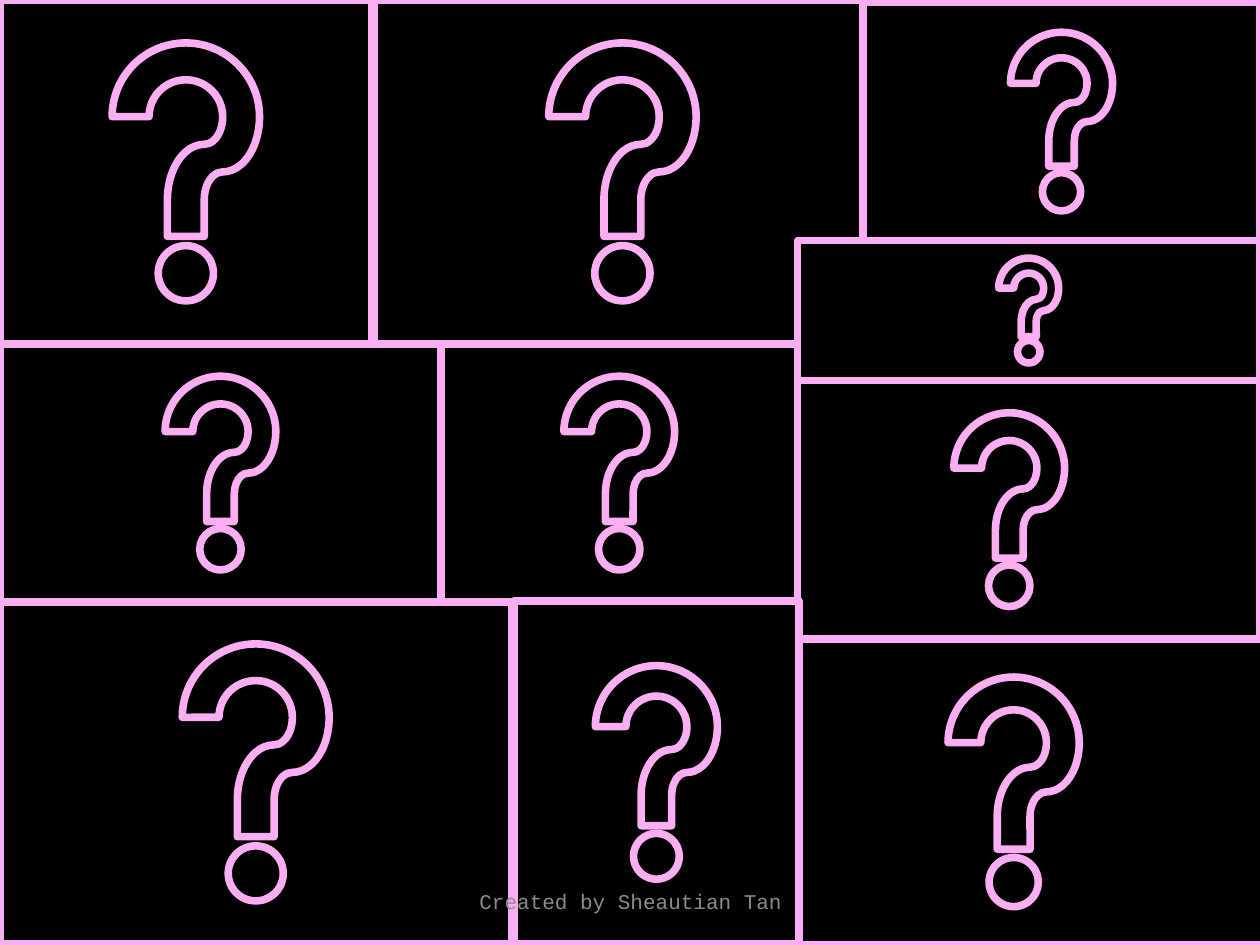
"""Build a slide covered by a wall of question tiles."""
from dataclasses import dataclass

from pptx import Presentation
from pptx.dml.color import RGBColor
from pptx.enum.shapes import MSO_SHAPE
from pptx.enum.text import MSO_ANCHOR, PP_ALIGN
from pptx.util import Inches, Pt

QUESTION_TILE = MSO_SHAPE.ACTION_BUTTON_HELP
MIDDLE = MSO_ANCHOR.MIDDLE
CENTER = PP_ALIGN.CENTER
BLANK_LAYOUT = 6


@dataclass(frozen=True)
class Theme:
    """Colours, font and sizes of the slide."""

    page: RGBColor = RGBColor(0xFF, 0xFF, 0xFF)
    tile: RGBColor = RGBColor(0x00, 0x00, 0x00)
    outline: RGBColor = RGBColor(0xFC, 0xAE, 0xF3)
    credit: RGBColor = RGBColor(0x8C, 0x8C, 0x8C)
    font: str = "Courier New"
    credit_size: Pt = Pt(12)
    outline_width: Pt = Pt(4.33)


class TileWall:
    """Draw styled elements on the current slide."""

    def __init__(self, page, theme):
        """Keep the page and theme, and paint the background."""
        self.page = page
        self.theme = theme
        background = page.background.fill
        background.solid()
        background.fore_color.rgb = theme.page

    def tile(self, left, top, width, height):
        """Add one question tile."""
        tile = self.page.shapes.add_shape(
            QUESTION_TILE, Inches(left), Inches(top), Inches(width), Inches(height)
        )
        tile.shadow.inherit = False
        tile.fill.solid()
        tile.fill.fore_color.rgb = self.theme.tile
        tile.line.color.rgb = self.theme.outline
        tile.line.width = self.theme.outline_width

    def credit(self, text, left, top, width, height):
        """Add a centred credit line."""
        box = self.page.shapes.add_textbox(
            Inches(left), Inches(top), Inches(width), Inches(height)
        )
        frame = box.text_frame
        frame.word_wrap = True
        frame.vertical_anchor = MIDDLE
        para = frame.paragraphs[0]
        para.alignment = CENTER
        span = para.add_run()
        span.text = text
        span.font.name = self.theme.font
        span.font.size = self.theme.credit_size
        span.font.color.rgb = self.theme.credit


TILES = [
    (6.02, 3.02, 3.98, 2.05),
    (6.05, 5.07, 3.99, 2.43),
    (0, 0, 2.95, 2.73),
    (0, 4.77, 4.06, 2.72),
    (2.97, 0, 3.94, 2.73),
    (0, 2.73, 3.5, 2.05),
    (6.85, 0.02, 3.15, 1.89),
    (3.5, 2.73, 2.83, 2.05),
    (6.33, 1.91, 3.67, 1.11),
    (4.08, 4.77, 2.26, 2.72),
]


def main():
    """Build and save the deck."""
    deck = Presentation()
    deck.slide_width = Inches(10)
    deck.slide_height = Inches(7.5)
    page = deck.slides.add_slide(deck.slide_layouts[BLANK_LAYOUT])
    wall = TileWall(page, Theme())
    for bounds in TILES:
        wall.tile(*bounds)
    wall.credit("Created by Sheautian Tan", 3.42, 6.95, 3.17, 0.4)
    deck.save("out.pptx")


if __name__ == "__main__":
    main()
